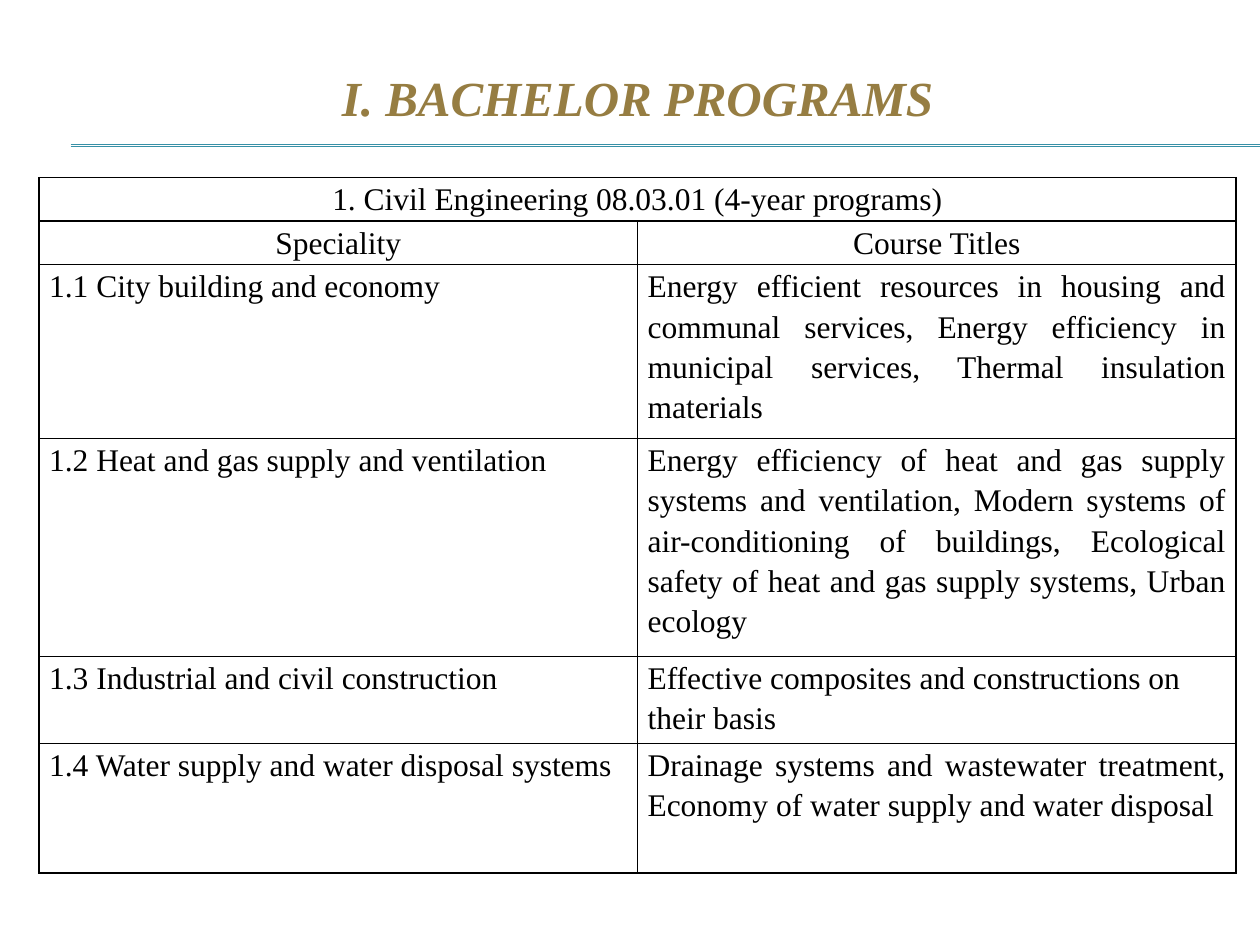
from lxml.etree import SubElement
from pptx import Presentation
from pptx.dml.color import RGBColor
from pptx.enum.shapes import MSO_CONNECTOR as CONN
from pptx.enum.text import MSO_ANCHOR as ANCHOR, PP_ALIGN as ALIGN
from pptx.oxml import parse_xml
from pptx.oxml.ns import nsdecls, qn
from pptx.util import Inches, Pt

WIDTH, HEIGHT = Inches(10), Inches(7.5)
LEFT, SPAN = 0.031, 0.95
FONT = "Times New Roman"
TITLE_FORMAT = {"size": Pt(28), "name": FONT, "bold": True, "italic": True}
CELL_FORMAT = {"size": Pt(18), "name": FONT, "bold": False}
ROW_HEIGHTS = [0.33, 0.33, 1.38, 1.73, 0.68, 1.03]
HEADINGS = [
    ("1. Civil Engineering 08.03.01 (4-year programs)", ""),
    ("Speciality", "Course Titles"),
]
PROGRAMS = [
    ("1.1 City building and economy",
     "Energy efficient resources in housing and communal services, Energy efficiency "
     "in municipal services, Thermal insulation materials", ALIGN.JUSTIFY),
    ("1.2 Heat and gas supply and ventilation",
     "Energy efficiency of heat and gas supply systems and ventilation, Modern systems "
     "of air-conditioning of buildings, Ecological safety of heat and gas supply systems, "
     "Urban ecology", ALIGN.JUSTIFY),
    ("1.3 Industrial and civil construction",
     "Effective composites and constructions on their basis", ALIGN.LEFT),
    ("1.4 Water supply and water disposal systems",
     "Drainage systems and wastewater treatment, Economy of water supply and water disposal",
     ALIGN.JUSTIFY),
]


def rgb(value):
    """Return the colour for a hex string."""
    return RGBColor.from_string(value)


def box(x, y, w, h):
    """Turn shares of the slide's size into lengths."""
    return [int(share * side) for share, side in zip((x, y, w, h), (WIDTH, HEIGHT) * 2)]


def write(tf, text, align, color, formats):
    """Write one formatted paragraph into a text frame."""
    p = tf.paragraphs[0]
    p.alignment = align
    r = p.add_run()
    r.text = text
    r.font.color.rgb = rgb(color)
    for name, value in formats.items():
        setattr(r.font, name, value)
    return p


def add_title(s, text):
    """Add the centred slide title."""
    tf = s.shapes.add_textbox(*box(LEFT, 0.041, SPAN, 0.123)).text_frame
    tf.word_wrap = True
    tf.vertical_anchor = ANCHOR.MIDDLE
    write(tf, text, ALIGN.CENTER, "967D42", TITLE_FORMAT)


def add_rule(s, y):
    """Add a thin rule that runs to the right edge."""
    x1, y1, x2, y2 = box(0.056, y, 1, y)
    sp = s.shapes.add_connector(CONN.STRAIGHT, x1, y1, x2, y2)
    sp.line.color.rgb = rgb("3891A7")
    sp.line.width = Pt(0.75)
    SubElement(sp._element.spPr, qn("a:effectLst"))


def add_borders(cell, color, width):
    """Draw a line on all four sides of a cell."""
    tc_pr = cell._tc.get_or_add_tcPr()
    for side in ("lnL", "lnR", "lnT", "lnB"):
        tc_pr.append(parse_xml(
            f'<a:{side} {nsdecls("a")} w="{Pt(width)}"><a:solidFill>'
            f'<a:srgbClr val="{color}"/></a:solidFill></a:{side}>'))


def fill_cell(cell, text, align):
    """Set a cell's margins, borders, fill and text."""
    cell.margin_left = cell.margin_right = Inches(0.08)
    cell.margin_top = cell.margin_bottom = 0
    add_borders(cell, "000000", 1)
    cell.fill.background()
    if text:
        write(cell.text_frame, text, align, "000000", CELL_FORMAT).line_spacing = 1.15


def add_programs(s):
    """Add the table of specialities and their courses."""
    rows = [[(text, ALIGN.CENTER) for text in row] for row in HEADINGS]
    rows += [[(name, ALIGN.LEFT), (courses, align)] for name, courses, align in PROGRAMS]
    frame = s.shapes.add_table(len(rows), 2, *box(LEFT, 0.188, SPAN, 0.73))
    table = frame.table
    table.first_row = table.horz_banding = False
    for row, height in zip(table.rows, ROW_HEIGHTS):
        row.height = Inches(height)
    for i, row in enumerate(rows):
        for j, (text, align) in enumerate(row):
            fill_cell(table.cell(i, j), text, align)
    table.cell(0, 0).merge(table.cell(0, 1))


def main():
    """Build and save the slide."""
    prs = Presentation()
    prs.slide_width, prs.slide_height = WIDTH, HEIGHT
    s = prs.slides.add_slide(prs.slide_layouts[6])
    for y in (0.153, 0.155):
        add_rule(s, y)
    add_title(s, "I. BACHELOR PROGRAMS")
    add_programs(s)
    prs.save("out.pptx")


if __name__ == "__main__":
    main()
